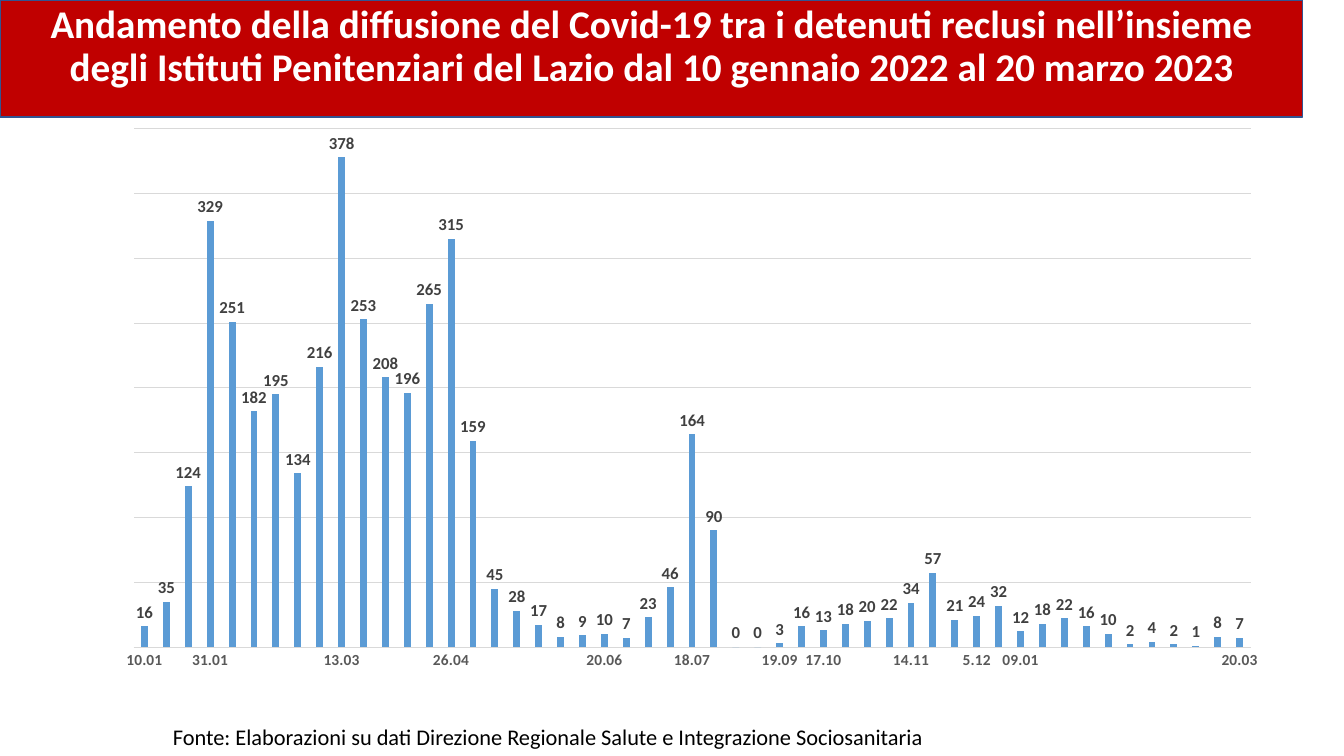
from lxml import etree
from pptx import Presentation
from pptx.chart.data import CategoryChartData
from pptx.dml.color import RGBColor
from pptx.enum.chart import XL_CHART_TYPE, XL_LABEL_POSITION, XL_TICK_MARK
from pptx.enum.text import MSO_ANCHOR, MSO_AUTO_SIZE, PP_ALIGN
from pptx.oxml import parse_xml
from pptx.oxml.ns import nsdecls, qn
from pptx.util import Pt

RED = RGBColor(0xC0, 0x00, 0x00)
NAVY = RGBColor(0x32, 0x54, 0x91)
WHITE = RGBColor(0xFF, 0xFF, 0xFF)
BLACK = RGBColor(0x00, 0x00, 0x00)
BLUE = RGBColor(0x5B, 0x9B, 0xD5)
LIGHT_GREY = RGBColor(0xD9, 0xD9, 0xD9)
MID_GREY = RGBColor(0x59, 0x59, 0x59)
DARK_GREY = RGBColor(0x40, 0x40, 0x40)

CASES = [
    16, 35, 124, 329, 251, 182, 195, 134, 216, 378, 253, 208, 196, 265, 315, 159, 45,
    28, 17, 8, 9, 10, 7, 23, 46, 164, 90, 0, 0, 3, 16, 13, 18, 20,
    22, 34, 57, 21, 24, 32, 12, 18, 22, 16, 10, 2, 4, 2, 1, 8, 7,
]
DATES = {
    0: "10.01", 3: "31.01", 9: "13.03", 14: "26.04", 21: "20.06", 25: "18.07",
    29: "19.09", 31: "17.10", 35: "14.11", 38: "5.12", 40: "09.01", 50: "20.03",
}


def style_font(font, size, color, bold=False):
    font.name = "Calibri"
    font.size = Pt(size)
    font.bold = bold
    font.color.rgb = color


presentation = Presentation()
presentation.slide_width = Pt(960)
presentation.slide_height = Pt(540)
slide = presentation.slides.add_slide(presentation.slide_layouts[5])

# Title banner
title = slide.shapes.title
title.left, title.top, title.width, title.height = Pt(0), Pt(0), Pt(930.5), Pt(83.5)
title.fill.solid()
title.fill.fore_color.rgb = RED
title.line.color.rgb = NAVY
title.line.width = Pt(1)
title.text_frame.word_wrap = True
title.text_frame.auto_size = MSO_AUTO_SIZE.NONE
title.text_frame.vertical_anchor = MSO_ANCHOR.TOP
paragraph = title.text_frame.paragraphs[0]
paragraph.alignment = PP_ALIGN.CENTER
paragraph.line_spacing = 0.9
paragraph.space_before = Pt(10)
run = paragraph.add_run()
run.text = (
    "Andamento della diffusione del Covid-19 tra i detenuti reclusi nell’insieme "
    "degli Istituti Penitenziari del Lazio dal 10 gennaio 2022 al 20 marzo 2023"
)
style_font(run.font, 28, WHITE, bold=True)

# Source note
source_note = slide.shapes.add_textbox(Pt(116.4), Pt(513), Pt(564.5), Pt(26.6))
source_note.text_frame.word_wrap = False
source_note.text_frame.auto_size = MSO_AUTO_SIZE.SHAPE_TO_FIT_TEXT
run = source_note.text_frame.paragraphs[0].add_run()
run.text = "Fonte: Elaborazioni su dati Direzione Regionale Salute e Integrazione Sociosanitaria"
style_font(run.font, 16, BLACK)

# Column chart of cases
chart_data = CategoryChartData()
chart_data.categories = [DATES.get(week, "") for week in range(len(CASES))]
chart_data.add_series("Series 1", CASES)
chart = slide.shapes.add_chart(
    XL_CHART_TYPE.COLUMN_CLUSTERED, Pt(73.5), Pt(83.5), Pt(841.7), Pt(402.5), chart_data
).chart
chart.has_legend = False
chart.has_title = False
style_font(chart.font, 10, BLACK)

plot = chart.plots[0]
plot.gap_width = 219
plot.overlap = -27
plot.vary_by_categories = False
series = plot.series[0]
series.format.fill.solid()
series.format.fill.fore_color.rgb = BLUE
labels = series.data_labels
labels.show_value = True
labels.position = XL_LABEL_POSITION.OUTSIDE_END
style_font(labels.font, 12, DARK_GREY, bold=True)

value_axis = chart.value_axis
value_axis.minimum_scale = 0
value_axis.maximum_scale = 400
value_axis.major_unit = 50
value_axis.visible = False
value_axis.has_major_gridlines = True
category_axis = chart.category_axis
category_axis.major_tick_mark = XL_TICK_MARK.NONE
style_font(category_axis.tick_labels.font, 11, MID_GREY, bold=True)
for line in (value_axis.major_gridlines.format.line, category_axis.format.line):
    line.color.rgb = LIGHT_GREY
    line.width = Pt(0.75)

# Automatic rotation keeps each date on one line; one slot per column
chart_xml = chart.element
axis_xml = chart_xml.find(".//" + qn("c:catAx"))
axis_xml.find(qn("c:txPr")).find(qn("a:bodyPr")).set("rot", "-60000000")
label_skip = etree.Element(qn("c:tickLblSkip"), val="1")
axis_xml.find(qn("c:noMultiLvlLbl")).addprevious(label_skip)

# Fixed inner plot area, as fractions of the chart frame
plot_area = chart_xml.find(".//" + qn("c:plotArea"))
for old_layout in plot_area.findall(qn("c:layout")):
    plot_area.remove(old_layout)
plot_area.insert(0, parse_xml(
    f'<c:layout {nsdecls("c")}><c:manualLayout><c:layoutTarget val="inner"/>'
    '<c:xMode val="edge"/><c:yMode val="edge"/>'
    '<c:x val="0.026"/><c:y val="0.021"/><c:w val="0.948"/><c:h val="0.92"/>'
    '</c:manualLayout></c:layout>'
))

presentation.save("out.pptx")
